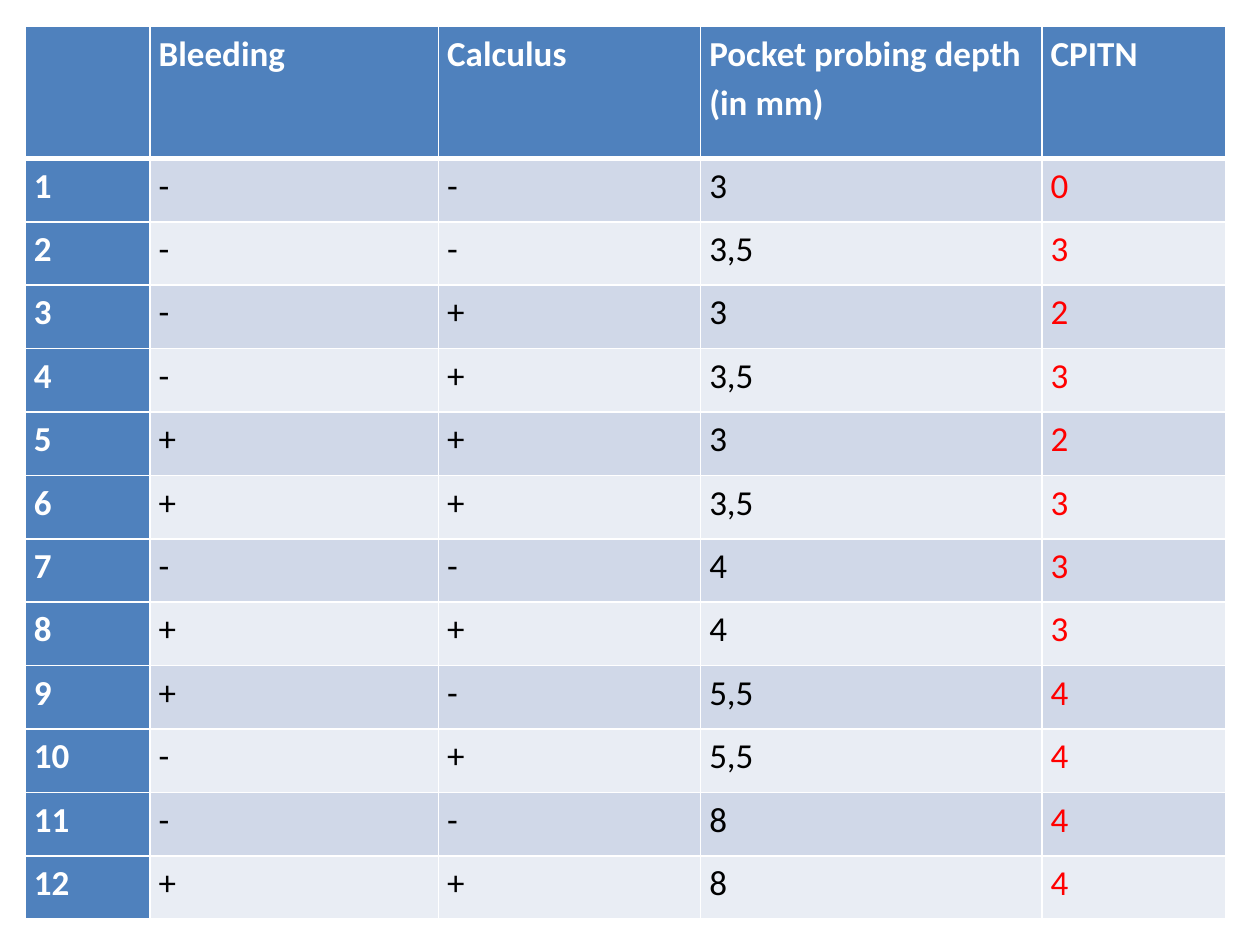
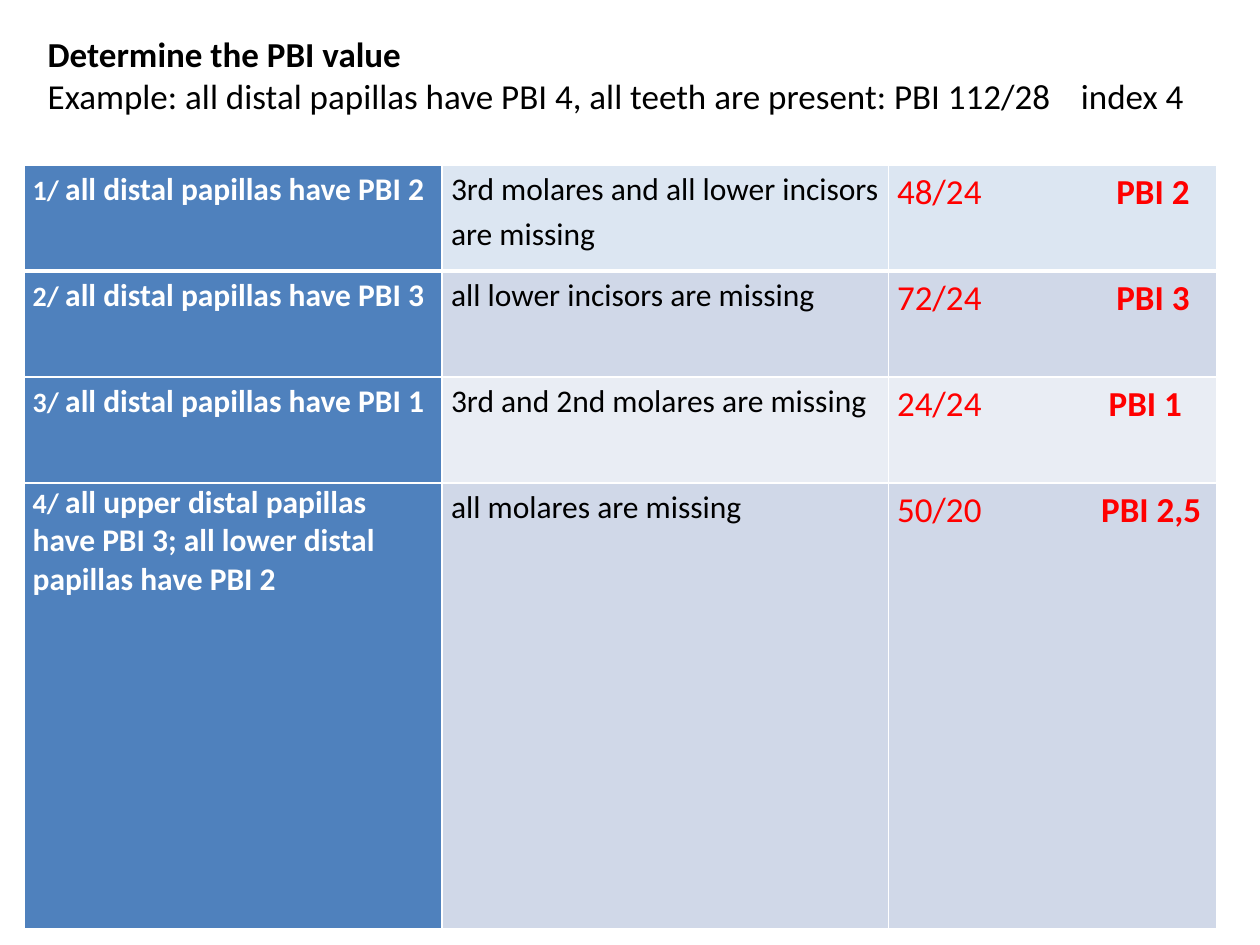
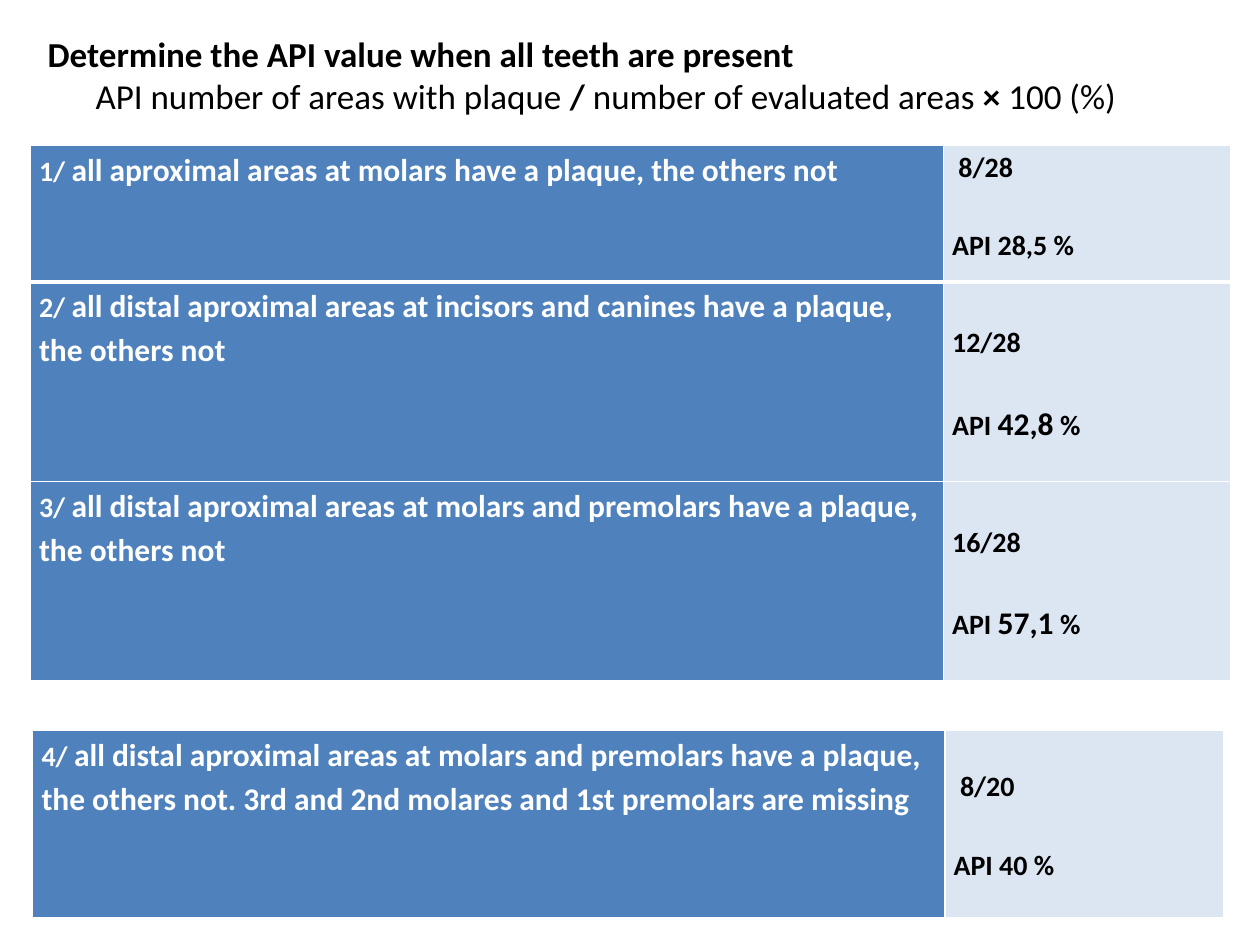
from itertools import cycle
from lxml.etree import SubElement as Sub
from pptx import Presentation
from pptx.dml.color import RGBColor as Color
from pptx.enum.text import MSO_ANCHOR as Anchor
from pptx.oxml.ns import qn
from pptx.util import Inches, Pt

WHITE = Color(0xFF, 0xFF, 0xFF)
BLACK = Color(0, 0, 0)
RED = Color(0xFF, 0, 0)
BLUE = Color(0x4F, 0x81, 0xBD)
PALE = Color(0xDC, 0xE6, 0xF2)
DARK = Color(0xD0, 0xD8, 0xE8)
LIGHT = Color(0xE9, 0xED, 0xF4)

WIDE, HIGH = Inches(10), Inches(7.5)
FONT = "Calibri"
PAD = Inches(0.07)
LINE = 1.15
THIN, THICK = Pt(1), Pt(3)

HEAD = dict(size=Pt(20), bold=True, color=WHITE)
BODY = dict(size=Pt(20), bold=False, color=BLACK)
MARK = dict(size=Pt(20), bold=False, color=RED)
NUM = dict(size=Pt(16), bold=True, color=WHITE)
TASK = dict(size=Pt(18), bold=True, color=WHITE)
NOTE = dict(size=Pt(18), bold=False, color=BLACK)
RATE = dict(size=Pt(16), bold=True, color=BLACK)
BIG = RATE | dict(size=Pt(18))
TITLE = BODY | dict(bold=True)
INDEX = MARK | dict(bold=True)

SCORES = [
    ("-", "-", "3", "0"), ("-", "-", "3,5", "3"), ("-", "+", "3", "2"),
    ("-", "+", "3,5", "3"), ("+", "+", "3", "2"), ("+", "+", "3,5", "3"),
    ("-", "-", "4", "3"), ("+", "+", "4", "3"), ("+", "-", "5,5", "4"),
    ("-", "+", "5,5", "4"), ("-", "-", "8", "4"), ("+", "+", "8", "4"),
]
PAPILLAS = [
    ("all distal papillas have PBI 2", "3rd molares and all lower incisors are missing",
     "48/24", "PBI 2", 1.74),
    ("all distal papillas have PBI 3", "all lower incisors are missing", "72/24", "PBI 3", 1.74),
    ("all distal papillas have PBI 1", "3rd and 2nd molares are missing", "24/24", "PBI 1", 1.68),
    ("all upper distal papillas have PBI 3; all lower distal papillas have PBI 2",
     "all molares are missing", "50/20", "PBI 2,5", 1.62),
]
PLAQUE = [
    ("all aproximal areas at molars have a plaque, the others not",
     "8/28", [("API 28,5 %", RATE)], 0, 0.05),
    ("all distal aproximal areas at incisors and canines have a plaque, the others not",
     "12/28", [("API ", RATE), ("42,8", BIG), (" %", RATE)], 0.31, 0),
    ("all distal aproximal areas at molars and premolars have a plaque, the others not",
     "16/28", [("API ", RATE), ("57,1", BIG), (" %", RATE)], 0.31, 0),
    ("all distal aproximal areas at molars and premolars have a plaque, the others not. "
     "3rd and 2nd molares and 1st premolars are missing",
     "8/20", [("API 40 %", RATE)], 0.27, 0.05),
]


def place(box):
    x, y, w, h = box
    return [int(n * s / 100) for n, s in ((x, WIDE), (y, HIGH), (w, WIDE), (h, HIGH))]


def para(runs, **form):
    return dict(runs=runs, form=form)


def write(frame, paras):
    for i, item in enumerate(paras):
        p = frame.paragraphs[0] if i == 0 else frame.add_paragraph()
        form = dict(item["form"])
        props = p._p.get_or_add_pPr()
        props.set("marL", str(Inches(form.pop("indent", 0))))
        stop = form.pop("tab", None)
        if stop:
            tabs = Sub(props, qn("a:tabLst"))
            Sub(tabs, qn("a:tab"), pos=str(Inches(stop)), algn="l")
        for key, val in form.items():
            setattr(p, key, val)
        for text, style in item["runs"]:
            run = p.add_run()
            run.text = text
            run.font.name = FONT
            for key, val in style.items():
                if key == "color":
                    run.font.color.rgb = val
                else:
                    setattr(run.font, key, val)


def edge(cell, top, base):
    props = cell._tc.get_or_add_tcPr()
    for side, size in (("L", THIN), ("R", THIN), ("T", top), ("B", base)):
        line = Sub(props, qn("a:ln" + side), w=str(size))
        Sub(Sub(line, qn("a:solidFill")), qn("a:srgbClr"), val=str(WHITE))


def cell(paras, fill, top=0):
    return dict(paras=paras, fill=fill, top=top)


def grid(slide, box, cols, rows, data):
    x, y, w, h = place(box)
    table = slide.shapes.add_table(len(rows), len(cols), x, y, w, h).table
    table.first_row = table.horz_banding = False
    for col, part in zip(table.columns, cols):
        col.width = int(w * part / sum(cols))
    for row, part in zip(table.rows, rows):
        row.height = int(h * part / sum(rows))
    for r, line in enumerate(data):
        for c, item in enumerate(line):
            spot = table.cell(r, c)
            form = dict(margin_left=PAD, margin_right=PAD, margin_bottom=0,
                        margin_top=Inches(item["top"]), vertical_anchor=Anchor.TOP)
            for key, val in form.items():
                setattr(spot, key, val)
            edge(spot, THICK if r == 1 else THIN, THICK if r == 0 else THIN)
            spot.fill.solid()
            spot.fill.fore_color.rgb = item["fill"]
            write(spot.text_frame, item["paras"])


def title(slide, box, paras):
    frame = slide.shapes.add_textbox(*place(box)).text_frame
    frame.word_wrap = True
    write(frame, paras)


def plain(text, style, fill):
    return cell([para([(text, style)], line_spacing=LINE)], fill)


def task(num, text, space=LINE):
    runs = [(f"{num}/ ", NUM), (text, TASK)]
    return cell([para(runs, line_spacing=space)], BLUE)


def probing(slide):
    names = ("", "Bleeding", "Calculus", "Pocket probing depth (in mm)", "CPITN")
    data = [[plain(name, HEAD, BLUE) for name in names]]
    for num, (score, fill) in enumerate(zip(SCORES, cycle((DARK, LIGHT))), 1):
        styles = (BODY, BODY, BODY, MARK)
        line = [plain(text, style, fill) for text, style in zip(score, styles)]
        data.append([plain(str(num), HEAD, BLUE)] + line)
    grid(slide, (2, 2.8, 95.3, 94.53), (0.99, 2.29, 2.08, 2.71, 1.46),
         [1.04] + [0.5] * len(SCORES), data)


def bleeding(slide):
    data = []
    fills = (PALE, DARK, LIGHT, DARK)
    for num, (item, fill) in enumerate(zip(PAPILLAS, fills), 1):
        text, note, part, index, stop = item
        runs = [(part + "\t", MARK), (index, INDEX)]
        data.append([
            task(num, text, 1 if num == len(PAPILLAS) else LINE),
            plain(note, NOTE, fill),
            cell([para(runs, line_spacing=LINE, tab=stop)], fill),
        ])
    grid(slide, (1.9, 17.47, 94.7, 80.8), (3.32, 3.54, 2.61), (0.84, 0.84, 0.84, 3.53), data)
    title(slide, (2.8, 2.8, 92.9, 10.27), [
        para([("Determine the PBI value", TITLE)]),
        para([("Example: all distal papillas have PBI 4, all teeth are present: "
               "PBI 112/28\tindex 4", BODY)], tab=8.2),
    ])


def plaque(slide):
    data = []
    for num, (text, part, rate, top, indent) in enumerate(PLAQUE, 1):
        paras = [para([(part, RATE)], line_spacing=LINE, indent=indent),
                 para(rate, line_spacing=LINE, space_before=Pt(22.4))]
        data.append([task(num, text), cell(paras, PALE, top)])
    grid(slide, (2.4, 15.4, 95.3, 56.67), (7.24, 2.28), (1.08, 1.58, 1.58), data[:3])
    grid(slide, (2.6, 77.33, 94.5, 20), (7.24, 2.21), (1.5,), data[3:])
    title(slide, (2.8, 2.8, 94.5, 14.8), [
        para([("Determine the API value when all teeth are present", TITLE)]),
        para([("API number of areas with plaque ", BODY), ("/ ", TITLE),
              ("number of evaluated areas ", BODY), ("×", TITLE), (" 100 (%)", BODY)],
             indent=0.38),
    ])


def main():
    deck = Presentation()
    deck.slide_width, deck.slide_height = WIDE, HIGH
    for draw in (probing, bleeding, plaque):
        draw(deck.slides.add_slide(deck.slide_layouts[6]))
    deck.save("out.pptx")


if __name__ == "__main__":
    main()
